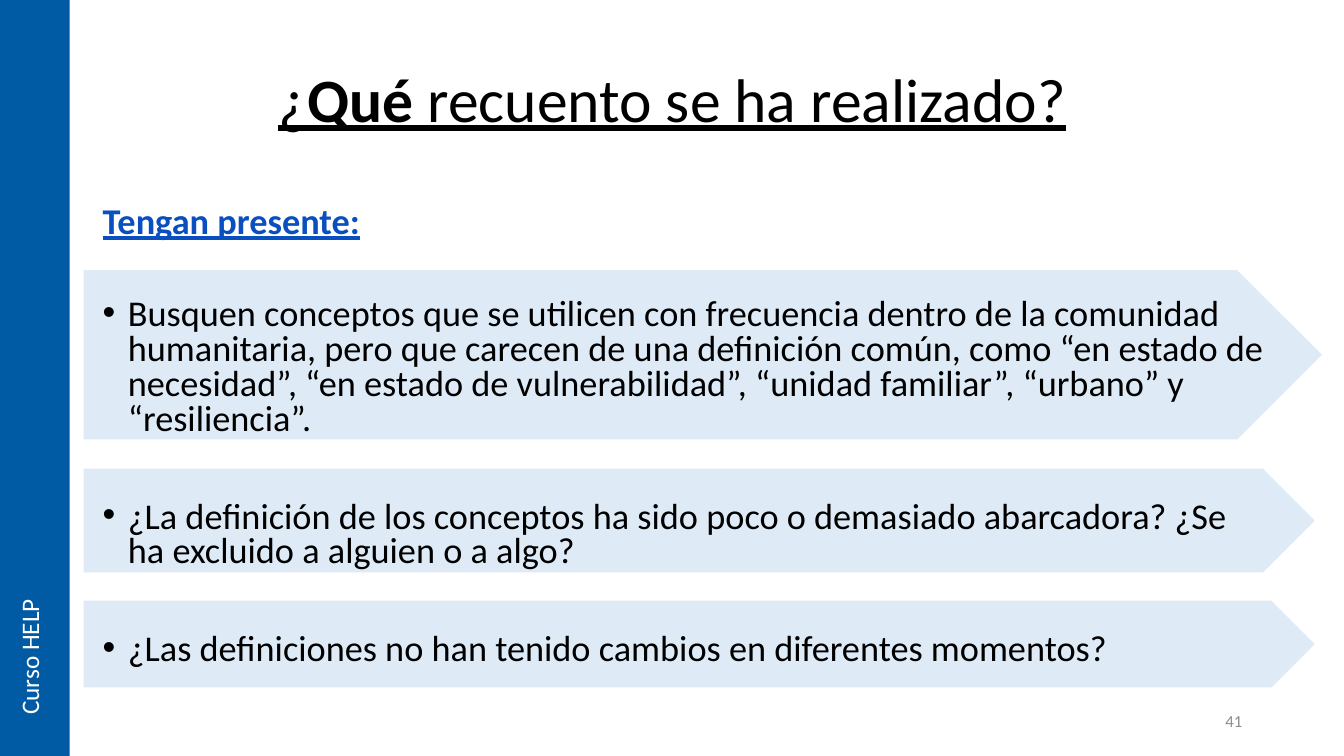
from dataclasses import dataclass

from lxml.etree import SubElement
from pptx import Presentation
from pptx.dml.color import RGBColor
from pptx.enum.shapes import MSO_SHAPE
from pptx.enum.text import MSO_ANCHOR, MSO_AUTO_SIZE, PP_ALIGN
from pptx.oxml.ns import qn
from pptx.util import Inches, Pt


@dataclass(frozen=True)
class Theme:
    font: str = "Calibri"
    black: str = "000000"
    white: str = "FFFFFF"
    gray: str = "8C8C8C"
    navy: str = "005BA4"
    blue: str = "0A4FC0"
    pale: str = "DEEBF7"
    title: float = 44
    body: float = 25.9
    side: float = 18
    page: float = 12


THEME = Theme()

# Top, width and height of each arrow
ARROWS = [(2.68, 12.28, 1.68), (4.65, 12.21, 1.03), (5.96, 12.21, 0.86)]

# Each point with its space before, which sets it on its arrow
POINTS = [
    ("Busquen conceptos que se utilicen con frecuencia dentro de la comunidad "
     "humanitaria, pero que carecen de una definición común, como “en estado de "
     "necesidad”, “en estado de vulnerabilidad”, “unidad familiar”, “urbano” y "
     "“resiliencia”.", 41),
    ("¿La definición de los conceptos ha sido poco o demasiado abarcadora? "
     "¿Se ha excluido a alguien o a algo?", 45),
    ("¿Las definiciones no han tenido cambios en diferentes momentos?", 45),
]


def add_text(para, text, size, color, bold=False, line=False,
             align=PP_ALIGN.LEFT, pitch=1.0, before=0):
    """Add one run to a paragraph and set the paragraph's layout."""
    para.alignment = align
    para.line_spacing = pitch
    para.space_before = Pt(before)
    run = para.add_run()
    run.text = text
    font = run.font
    font.name, font.size = THEME.font, Pt(size)
    font.bold, font.underline = bold, line
    font.color.rgb = RGBColor.from_string(color)


def add_bullet(para):
    props = para._p.get_or_add_pPr()
    props.set("marL", str(Inches(0.25)))
    props.set("indent", str(Inches(-0.25)))
    SubElement(props, qn("a:buFont")).set("typeface", "Arial")
    SubElement(props, qn("a:buChar")).set("char", "•")


def add_box(slide, left, top, width, height, wrap=True, anchor=MSO_ANCHOR.TOP):
    box = slide.shapes.add_textbox(
        Inches(left), Inches(top), Inches(width), Inches(height))
    frame = box.text_frame
    frame.word_wrap = wrap
    frame.vertical_anchor = anchor
    return frame


def add_block(slide, kind, left, top, width, height, color):
    block = slide.shapes.add_shape(
        kind, Inches(left), Inches(top), Inches(width), Inches(height))
    block.shadow.inherit = False
    block.fill.solid()
    block.fill.fore_color.rgb = RGBColor.from_string(color)
    block.line.fill.background()


def add_title(slide):
    title = slide.shapes.title
    title.left, title.top = Inches(0.92), Inches(0.29)
    title.width, title.height = Inches(11.5), Inches(1.45)
    frame = title.text_frame
    frame.auto_size = MSO_AUTO_SIZE.NONE
    frame.vertical_anchor = MSO_ANCHOR.MIDDLE
    parts = [("¿", False), ("Qué ", True), ("recuento se ha realizado?", False)]
    for text, bold in parts:
        add_text(frame.paragraphs[0], text, THEME.title, THEME.black, bold=bold,
                 line=True, align=PP_ALIGN.CENTER, pitch=0.9)


def add_points(slide):
    frame = add_box(slide, 0.92, 2, 11.72, 4.76)
    add_text(frame.paragraphs[0], "Tengan presente:", THEME.body, THEME.blue,
             bold=True, line=True, pitch=0.8)
    for text, before in POINTS:
        para = frame.add_paragraph()
        add_bullet(para)
        add_text(para, text, THEME.body, THEME.black, pitch=0.8, before=before)


def add_side(slide):
    add_block(slide, MSO_SHAPE.RECTANGLE, 0, 0, 0.69, 7.5, THEME.navy)
    frame = add_box(slide, 0.09, 5.61, 0.5, 1.58, wrap=False)
    frame._txBody.bodyPr.set("vert", "vert270")
    add_text(frame.paragraphs[0], "Curso HELP", THEME.side, THEME.white)


def add_page(slide):
    frame = add_box(slide, 9.42, 6.95, 3, 0.4, anchor=MSO_ANCHOR.MIDDLE)
    add_text(frame.paragraphs[0], "41", THEME.page, THEME.gray,
             align=PP_ALIGN.RIGHT)


def main():
    deck = Presentation()
    deck.slide_width, deck.slide_height = Inches(13.33), Inches(7.5)
    slide = deck.slides.add_slide(deck.slide_layouts[5])

    # Arrows behind the points
    for top, width, height in ARROWS:
        add_block(slide, MSO_SHAPE.PENTAGON, 0.83, top, width, height, THEME.pale)

    # Text
    add_title(slide)
    add_points(slide)

    # Side band and page number
    add_side(slide)
    add_page(slide)
    deck.save("out.pptx")


if __name__ == "__main__":
    main()
